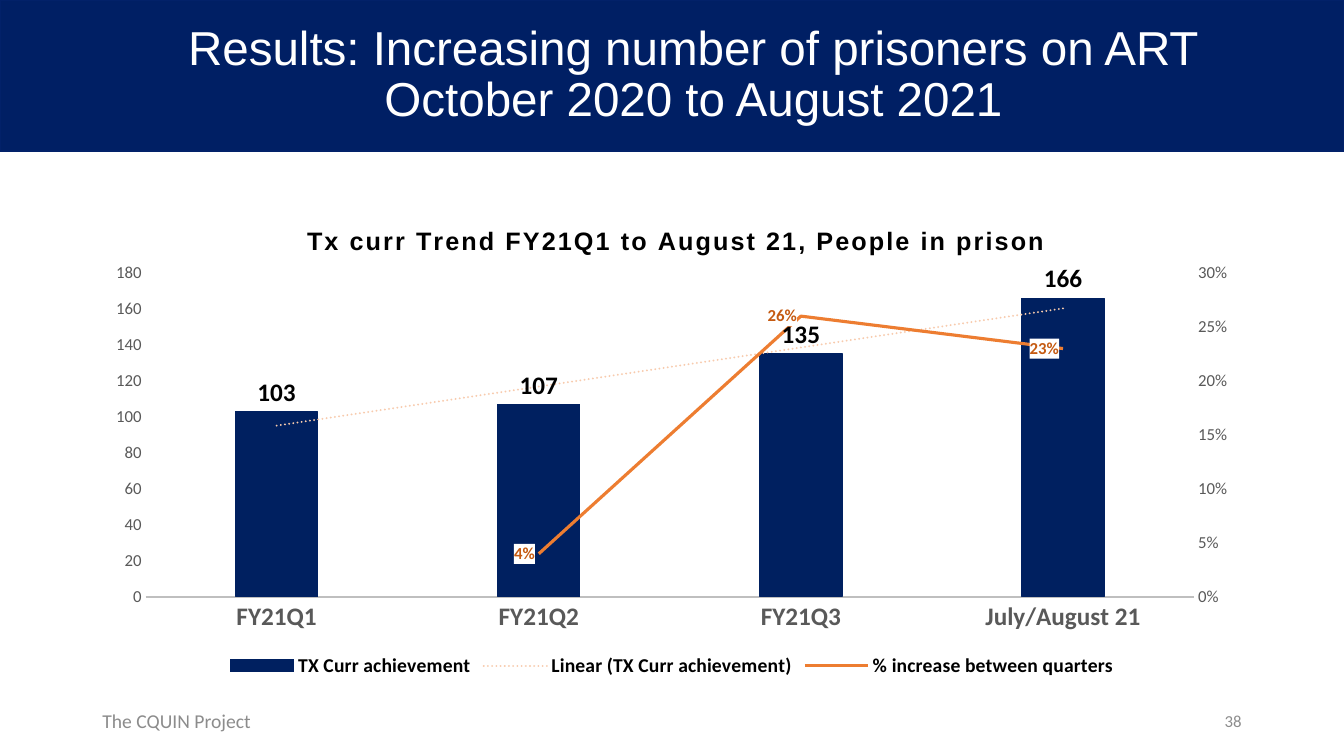
import copy
import pptx
import pptx.util
import pptx.dml.color
import pptx.chart.axis
import pptx.chart.data
import pptx.enum.chart
import pptx.enum.shapes
import pptx.enum.text
import pptx.oxml
import pptx.oxml.ns

Pt = pptx.util.Pt
RGB = pptx.dml.color.RGBColor
PP_ALIGN = pptx.enum.text.PP_ALIGN
LABEL_POS = pptx.enum.chart.XL_LABEL_POSITION
qn = pptx.oxml.ns.qn

BANNER = RGB(0x00, 0x1F, 0x64)
BANNER_EDGE = RGB(0x02, 0x21, 0x69)
NAVY = RGB(0x00, 0x20, 0x60)
ORANGE = RGB(0xED, 0x7D, 0x31)
DARK_ORANGE = RGB(0xC5, 0x5A, 0x11)
PEACH = RGB(0xF8, 0xCB, 0xAD)
AXIS_TEXT = RGB(0x59, 0x59, 0x59)
AXIS_LINE = RGB(0xBF, 0xBF, 0xBF)
FOOTER_GREY = RGB(0x8C, 0x8C, 0x8C)
BLACK = RGB(0, 0, 0)
WHITE = RGB(0xFF, 0xFF, 0xFF)

TEXTS = [
    ("Results: Increasing number of prisoners on ART\vOctober 2020 to August 2021",
     (31, 24, 929, 60), "Arial", 34, WHITE, PP_ALIGN.CENTER, 0.9),
    ("The CQUIN Project", (66, 500.5, 216, 29), "Calibri", 14, FOOTER_GREY, PP_ALIGN.LEFT, 1),
    ("38", (678, 500.5, 216, 29), "Calibri", 12, FOOTER_GREY, PP_ALIGN.RIGHT, 1),
]
CHART_TITLE = "Tx curr Trend FY21Q1 to August 21, People in prison"
QUARTERS = ["FY21Q1", "FY21Q2", "FY21Q3", "July/August 21"]
SERIES = [
    ("TX Curr achievement", [103, 107, 135, 166], "General"),
    ("% increase between quarters", [None, 0.04, 0.26, 0.23], "0%"),
]
CHART_BOX = (66, 144, 828, 343)
PLOT_BOX = (104, 195, 749, 231.5)
TITLE_POS = (216, 157)
NS = pptx.oxml.ns.nsdecls("c", "a")


def xml(text):
    return pptx.oxml.parse_xml(text.replace(">", f" {NS}>", 1))


def set_font(font, size, color, bold=False, name="Calibri"):
    font.name, font.size, font.bold = name, Pt(size), bold
    font.color.rgb = color


def make_layout(x, y, *size):
    left, top, width, height = CHART_BOX
    fractions = [(x - left) / width, (y - top) / height]
    fractions += [v / full for v, full in zip(size, (width, height))]
    target = '<c:layoutTarget val="inner"/>' if size else ""
    modes = '<c:xMode val="edge"/><c:yMode val="edge"/>'
    values = "".join(f'<c:{k} val="{v:.4f}"/>' for k, v in zip("xywh", fractions))
    return xml(f"<c:layout><c:manualLayout>{target}{modes}{values}</c:manualLayout></c:layout>")


def drop(parent, tag):
    for el in parent.findall(qn(tag)):
        parent.remove(el)


def label_series(series, size, color, position, number_format):
    labels = series.data_labels
    labels.show_value = True
    labels.position = position
    labels.number_format = number_format
    labels.number_format_is_linked = False
    set_font(labels.font, size, color, True)
    return labels


def format_axis(axis, size, bold=False):
    axis.major_tick_mark = axis.minor_tick_mark = pptx.enum.chart.XL_TICK_MARK.NONE
    axis.has_major_gridlines = False
    set_font(axis.tick_labels.font, size, AXIS_TEXT, bold)


def scale_axis(axis, top, step, number_format):
    axis.minimum_scale, axis.maximum_scale, axis.major_unit = 0, top, step
    axis.tick_labels.number_format = number_format
    axis.tick_labels.number_format_is_linked = False


def add_second_axes(plot_area):
    cat = plot_area.find(qn("c:catAx"))
    val = plot_area.find(qn("c:valAx"))
    cat2, val2 = copy.deepcopy(cat), copy.deepcopy(val)
    for el, own, other in ((cat2, "5001", "5002"), (val2, "5002", "5001")):
        el.find(qn("c:axId")).set("val", own)
        el.find(qn("c:crossAx")).set("val", other)
    cat2.find(qn("c:delete")).set("val", "1")
    val2.find(qn("c:axPos")).set("val", "r")
    val2.find(qn("c:crosses")).set("val", "max")
    val.addnext(val2)
    val2.addnext(cat2)
    return pptx.chart.axis.ValueAxis(val2)


def move_to_line(plot_area):
    bar = plot_area.find(qn("c:barChart"))
    ser = bar.findall(qn("c:ser"))[1]
    drop(ser, "c:invertIfNegative")
    line = xml('<c:lineChart><c:grouping val="standard"/><c:varyColors val="0"/>'
               '<c:marker val="1"/><c:axId val="5001"/><c:axId val="5002"/></c:lineChart>')
    line.insert(2, ser)
    bar.addnext(line)


def add_chart(slide):
    data = pptx.chart.data.CategoryChartData()
    data.categories = QUARTERS
    for name, values, number_format in SERIES:
        data.add_series(name, values, number_format)
    kind = pptx.enum.chart.XL_CHART_TYPE.COLUMN_CLUSTERED
    chart = slide.shapes.add_chart(kind, *map(Pt, CHART_BOX), data).chart
    set_font(chart.font, 10, BLACK)

    chart.has_title = True
    tf = chart.chart_title.text_frame
    tf.text = CHART_TITLE
    r = tf.paragraphs[0].runs[0]
    set_font(r.font, 18, BLACK, True, "Arial")
    r.font._element.set("spc", "150")
    title = chart.chart_title._element
    drop(title, "c:layout")
    title.find(qn("c:tx")).addnext(make_layout(*TITLE_POS))

    chart.has_legend = True
    chart.legend.position = pptx.enum.chart.XL_LEGEND_POSITION.BOTTOM
    chart.legend.include_in_layout = False
    set_font(chart.legend.font, 14, BLACK, True)

    format_axis(chart.category_axis, 18, True)
    chart.category_axis.format.line.color.rgb = AXIS_LINE
    chart.category_axis.format.line.width = Pt(1.5)
    format_axis(chart.value_axis, 12)
    chart.value_axis.format.line.fill.background()

    plot_area = chart.plots[0]._element.getparent()
    drop(plot_area, "c:layout")
    plot_area.insert(0, make_layout(*PLOT_BOX))
    right_axis = add_second_axes(plot_area)
    scale_axis(chart.value_axis, 180, 20, "General")
    scale_axis(right_axis, 0.3, 0.05, "0%")
    move_to_line(plot_area)

    bar_plot, line_plot = chart.plots
    bar_plot.gap_width = 219
    bar_plot.vary_by_categories = False
    bars, line = bar_plot.series[0], line_plot.series[0]
    bars.format.fill.solid()
    bars.format.fill.fore_color.rgb = NAVY
    bars.format.line.color.rgb = NAVY
    bars.format.line.width = Pt(0.75)
    label_series(bars, 18, BLACK, LABEL_POS.OUTSIDE_END, "General")
    bars._element.find(qn("c:cat")).addprevious(xml(
        f'<c:trendline><c:spPr><a:ln w="{Pt(1.5)}" cap="rnd"><a:solidFill><a:srgbClr val="{PEACH}"/>'
        '</a:solidFill><a:prstDash val="sysDot"/></a:ln></c:spPr><c:trendlineType val="linear"/>'
        '<c:dispRSqr val="0"/><c:dispEq val="0"/></c:trendline>'))

    line.smooth = False
    line.marker.style = pptx.enum.chart.XL_MARKER_STYLE.NONE
    line.format.line.color.rgb = ORANGE
    line.format.line.width = Pt(2.25)
    labels = label_series(line, 12, DARK_ORANGE, LABEL_POS.LEFT, "0%")
    labels._element.find(qn("c:txPr")).addprevious(xml(
        f'<c:spPr><a:solidFill><a:srgbClr val="{WHITE}"/></a:solidFill></c:spPr>'))


def add_text(slide, text, box, font, size, color, align, spacing):
    tf = slide.shapes.add_textbox(*map(Pt, box)).text_frame
    tf.word_wrap = True
    tf.vertical_anchor = pptx.enum.text.MSO_ANCHOR.MIDDLE
    tf.text = text
    p = tf.paragraphs[0]
    p.alignment, p.line_spacing = align, spacing
    for r in p.runs:
        set_font(r.font, size, color, False, font)


def main():
    prs = pptx.Presentation()
    prs.slide_width, prs.slide_height = Pt(960), Pt(540)
    s = prs.slides.add_slide(prs.slide_layouts[6])
    sp = s.shapes.add_shape(pptx.enum.shapes.MSO_SHAPE.RECTANGLE, 0, 0, Pt(960), Pt(108))
    sp.shadow.inherit = False
    sp.fill.solid()
    sp.fill.fore_color.rgb = BANNER
    sp.line.color.rgb = BANNER_EDGE
    sp.line.width = Pt(1)
    for item in TEXTS:
        add_text(s, *item)
    add_chart(s)
    prs.save("out.pptx")


if __name__ == "__main__":
    main()
